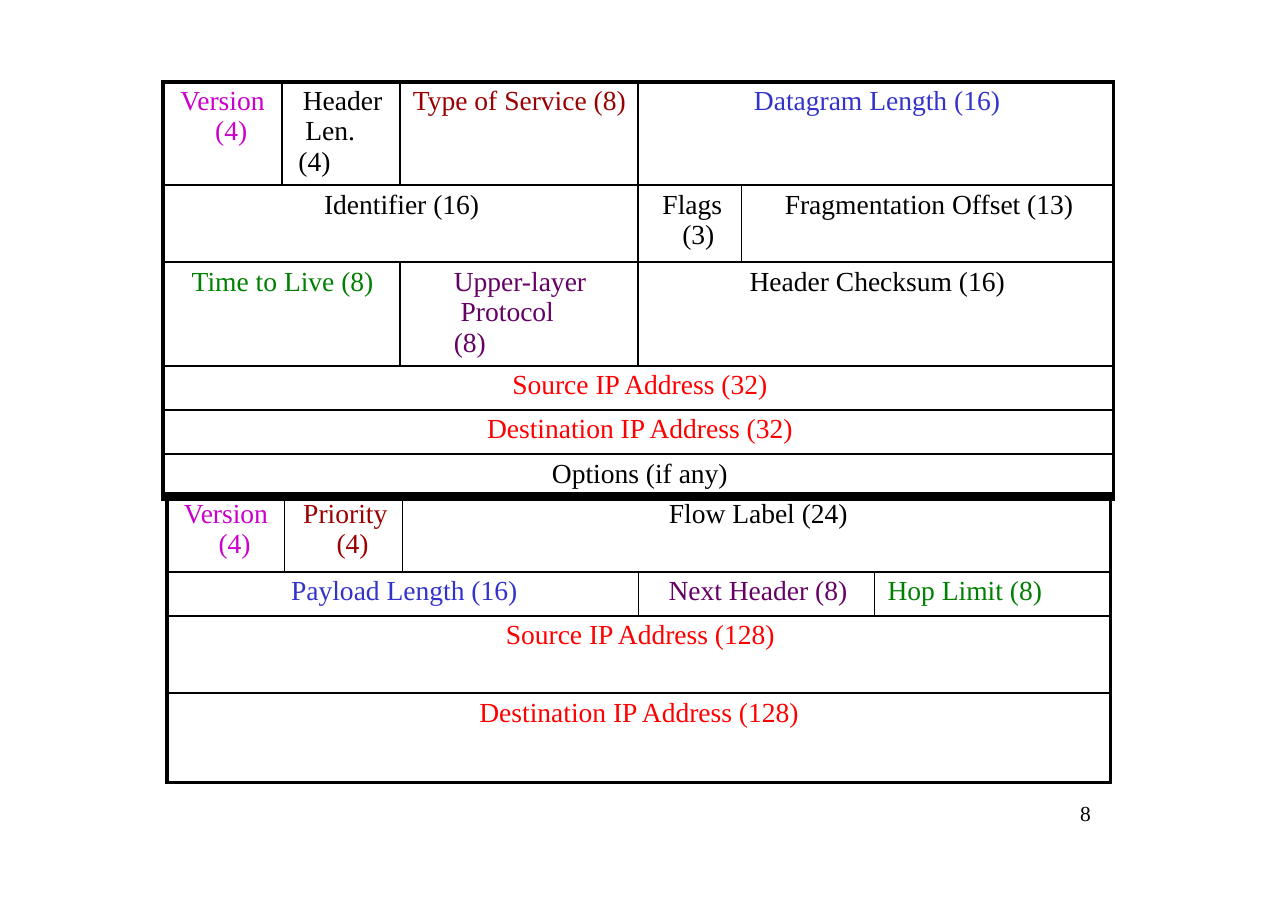
from dataclasses import dataclass

from lxml import etree
from pptx import Presentation
from pptx import util as u
from pptx.dml.color import RGBColor
from pptx.enum import text
from pptx.oxml import ns

BLACK = RGBColor(0x00, 0x00, 0x00)
BORDER = RGBColor(0x01, 0x01, 0x01)
MAGENTA = RGBColor(0xCC, 0x00, 0xCC)
MAROON = RGBColor(0x9A, 0x00, 0x00)
BLUE = RGBColor(0x33, 0x33, 0xCC)
GREEN = RGBColor(0x00, 0x80, 0x00)
PURPLE = RGBColor(0x65, 0x00, 0x65)
RED = RGBColor(0xFF, 0x00, 0x00)
FONT = "Times New Roman"


@dataclass(frozen=True)
class Field:
    lines: tuple[str, ...]
    color: RGBColor = BLACK
    span: int = 1
    left: float = 0.08
    first: float = 0
    centered: bool = False


@dataclass(frozen=True)
class Header:
    left: float
    top: float
    columns: tuple[float, ...]
    heights: tuple[float, ...]
    bottom_border: float
    rows: tuple[tuple[Field, ...], ...]


VERSION = Field(("Version", " (4)"), MAGENTA, left=1.04, first=-0.64)

IPV4 = Header(
    3.76, 1.88, (2.74, 2.72, 5.49, 2.39, 8.56),
    (1.78, 1.78, 1.78, 1.02, 1.02, 1.02), 3,
    (
        (VERSION,
         Field(("Header", " Len.", "(4)"), left=0.38, first=0.1),
         Field(("Type of Service (8)",), MAROON, left=0.3),
         Field(("Datagram Length (16)",), BLUE, 2, 2.67)),
        (Field(("Identifier (16)",), span=3, left=3.71),
         Field(("Flags", " (3)"), left=0.86, first=-0.3),
         Field(("Fragmentation Offset (13)",), left=0.99)),
        (Field(("Time to Live (8)",), GREEN, 2, 0.66),
         Field(("Upper-layer", " Protocol", "(8)"), PURPLE, left=1.24),
         Field(("Header Checksum (16)",), span=2, left=2.57)),
        (Field(("Source IP Address (32)",), RED, 5, centered=True),),
        (Field(("Destination IP Address (32)",), RED, 5, centered=True),),
        (Field(("Options (if any)",), span=5, centered=True),),
    ),
)

IPV6 = Header(
    3.84, 11.4, (2.72, 2.72, 5.44, 5.44, 5.44),
    (1.78, 1.02, 1.78, 2.06), 2.25,
    (
        (VERSION,
         Field(("Priority", " (4)"), MAROON, left=1.04, first=-0.61),
         Field(("Flow Label (24)",), span=3, centered=True)),
        (Field(("Payload Length (16)",), BLUE, 3, 2.87),
         Field(("Next Header (8)",), PURPLE, left=0.69),
         Field(("Hop Limit (8)",), GREEN, left=0.3)),
        (Field(("Source IP Address (128)",), RED, 5, centered=True),),
        (Field(("Destination IP Address (128)",), RED, 5, 7.21),),
    ),
)


def add_run(p, content: str, size: float, color: RGBColor) -> None:
    r = p.add_run()
    r.text = content
    r.font.name = FONT
    r.font.size = u.Pt(size)
    r.font.color.rgb = color


def set_indent(p, left: float, first: float = 0) -> None:
    pPr = p._p.get_or_add_pPr()
    pPr.set("marL", str(u.Cm(left)))
    pPr.set("indent", str(u.Cm(first)))


def set_borders(cell, widths: dict[str, float]) -> None:
    tcPr = cell._tc.get_or_add_tcPr()
    for i, (side, width) in enumerate(widths.items()):
        ln = etree.Element(ns.qn(f"a:ln{side}"), w=str(u.Pt(width)))
        fill = etree.SubElement(ln, ns.qn("a:solidFill"))
        etree.SubElement(fill, ns.qn("a:srgbClr"), val=str(BORDER))
        tcPr.insert(i, ln)


def fill_field(cell, field: Field) -> None:
    p = cell.text_frame.paragraphs[0]
    p.space_before = u.Pt(3)
    p.alignment = text.PP_ALIGN.CENTER if field.centered else text.PP_ALIGN.LEFT
    set_indent(p, field.left, field.first)
    for i, line in enumerate(field.lines):
        if i:
            p.add_line_break()
        add_run(p, line, 18, field.color)


def add_header(s, header: Header) -> None:
    n_rows, n_cols = len(header.heights), len(header.columns)
    table = s.shapes.add_table(
        n_rows, n_cols, u.Cm(header.left), u.Cm(header.top),
        u.Cm(sum(header.columns)), u.Cm(sum(header.heights))).table
    table.first_row = table.horz_banding = False
    for column, width in zip(table.columns, header.columns):
        column.width = u.Cm(width)
    for row, height in zip(table.rows, header.heights):
        row.height = u.Cm(height)

    for y, fields in enumerate(header.rows):
        x = 0
        for field in fields:
            end = x + field.span
            borders = {
                "L": 3 if x == 0 else 1,
                "R": 2.25 if end == n_cols else 1,
                "T": 3 if y == 0 else 1.5,
                "B": header.bottom_border if y == n_rows - 1 else 1.5,
            }
            for i in range(x, end):
                cell = table.cell(y, i)
                cell.margin_left = cell.margin_right = cell.margin_bottom = 0
                cell.margin_top = u.Cm(0.1)
                cell.fill.background()
                set_borders(cell, borders)
            if field.span > 1:
                table.cell(y, x).merge(table.cell(y, end - 1))
            fill_field(table.cell(y, x), field)
            x = end


def add_page_number(s, number: str) -> None:
    sp = s.shapes.add_textbox(u.Cm(24.82), u.Cm(18.47), u.Cm(0.64), u.Cm(0.61))
    tf = sp.text_frame
    tf.word_wrap = True
    tf.margin_left = tf.margin_right = tf.margin_top = tf.margin_bottom = 0
    p = tf.paragraphs[0]
    p.line_spacing = u.Pt(16.2)
    set_indent(p, 0.08)
    add_run(p, number, 14, BLACK)


def main() -> None:
    prs = Presentation()
    prs.slide_width, prs.slide_height = u.Cm(29.69), u.Cm(20.98)
    s = prs.slides.add_slide(prs.slide_layouts[6])
    add_page_number(s, "8")
    for header in (IPV4, IPV6):
        add_header(s, header)
    prs.save("out.pptx")


if __name__ == "__main__":
    main()
